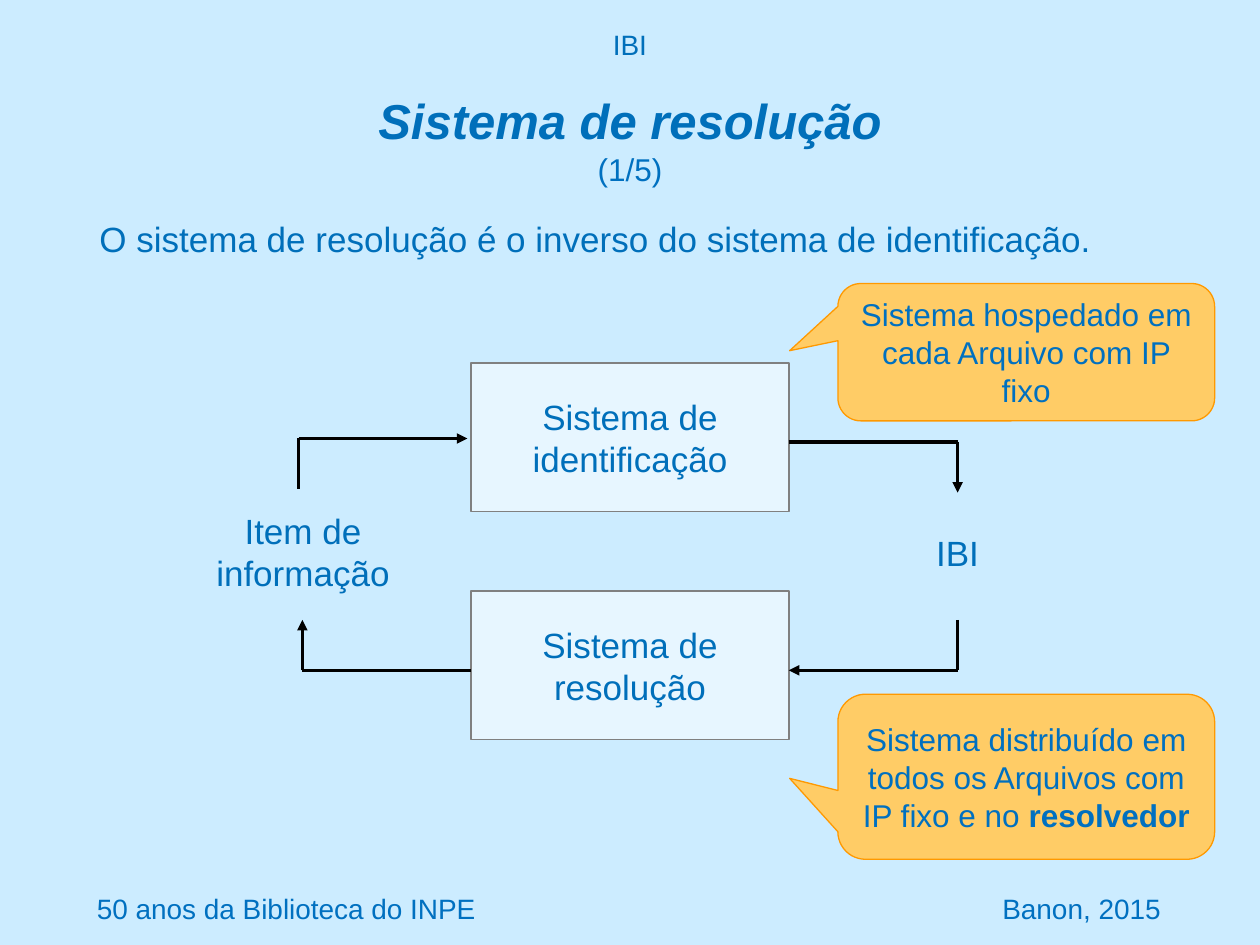
from lxml import etree
from pptx import Presentation
from pptx.dml.color import RGBColor
from pptx.enum.shapes import MSO_CONNECTOR as Connector, MSO_SHAPE as Shape
from pptx.enum.text import MSO_ANCHOR as Anchor, PP_ALIGN as Align
from pptx.oxml.ns import qn
from pptx.util import Inches, Pt

BLUE, DEEP_BLUE = "006FBA", "0070C0"
TITLE = [("Sistema de resolução", dict(size=28, bold=True, italic=True)),
         ("\n", {}),
         ("(1/5)", dict(size=18, color=DEEP_BLUE))]
STATEMENT = "O sistema de resolução é o inverso do sistema de identificação."
HEADER = "IBI"
FOOTER = [("50 anos da Biblioteca do INPE", Align.LEFT),
          ("Banon, 2015", Align.RIGHT)]
SYSTEMS = [("Sistema de identificação", 2.88), ("Sistema de resolução", 4.69)]
ENDPOINTS = [("Item de informação", (1.54, 3.91, 1.73, 0.94)),
             ("IBI", (7.13, 3.99, 0.94, 0.79))]
CALLOUTS = [
    ([("Sistema hospedado em cada Arquivo com IP fixo", {})], 2.25, 1.09, -0.011),
    ([("Sistema distribuído em todos os Arquivos com IP fixo e no ", {}),
      ("resolvedor", dict(bold=True))], 5.51, 1.31, 0.01),
]
FLOWS = [
    [(6.26, 3.51), (7.6, 3.51), (7.6, 3.91)],
    [(7.6, 4.92), (7.6, 5.32), (6.26, 5.32)],
    [(3.74, 5.32), (2.4, 5.32), (2.4, 4.92)],
    [(2.37, 3.88), (2.37, 3.48), (3.71, 3.48)],
]


def rgb(value):
    return RGBColor.from_string(value)


def write(shape, text, size=20, color=BLUE, align=Align.CENTER,
          anchor=Anchor.MIDDLE, inset_y=0.05):
    frame = shape.text_frame
    frame.word_wrap = True
    frame.vertical_anchor = anchor
    frame.margin_top = frame.margin_bottom = Inches(inset_y)
    paragraph = frame.paragraphs[0]
    paragraph.alignment = align
    for words, style in [(text, {})] if isinstance(text, str) else text:
        if words == "\n":
            paragraph.add_line_break()
            continue
        run = paragraph.add_run()
        run.text = words
        run.font.name = "Arial"
        run.font.size = Pt(style.get("size", size))
        run.font.bold = style.get("bold", False)
        run.font.italic = style.get("italic", False)
        run.font.color.rgb = rgb(style.get("color", color))


def add_text(slide, box, text, **style):
    write(slide.shapes.add_textbox(*map(Inches, box)), text, **style)


def add_block(slide, kind, box, text, fill=None, line=None, width=1, **style):
    block = slide.shapes.add_shape(kind, *map(Inches, box))
    block.shadow.inherit = False
    if fill:
        block.fill.solid()
        block.fill.fore_color.rgb = rgb(fill)
        block.line.color.rgb = rgb(line)
        block.line.width = Pt(width)
    else:
        block.fill.background()
        block.line.fill.background()
    write(block, text, **style)
    return block


def add_segment(slide, start, end, arrow):
    segment = slide.shapes.add_connector(
        Connector.STRAIGHT, *map(Inches, start + end))
    segment.line.color.rgb = rgb("000000")
    segment.line.width = Pt(2)
    if arrow:
        etree.SubElement(segment.line._get_or_add_ln(), qn("a:tailEnd"),
                         type="triangle")
    etree.SubElement(segment._element.spPr, qn("a:effectLst"))


def main():
    deck = Presentation()
    deck.slide_width, deck.slide_height = Inches(10), Inches(7.5)
    slide = deck.slides.add_slide(deck.slide_layouts[6])
    slide.background.fill.solid()
    slide.background.fill.fore_color.rgb = rgb("CCECFF")

    add_text(slide, (0.75, 0.52, 8.5, 1.17), TITLE)
    add_text(slide, (0.69, 1.73, 8.62, 0.4), STATEMENT,
             align=Align.LEFT, anchor=Anchor.TOP, inset_y=0)
    add_text(slide, (0, 0.17, 10, 0.37), HEADER, size=16, anchor=Anchor.TOP)
    for column, (credit, align) in enumerate(FOOTER):
        add_text(slide, (0.67 + 4.32 * column, 7, 4.32, 0.42), credit,
                 size=16, color=DEEP_BLUE, align=align)

    for system, top in SYSTEMS:
        add_block(slide, Shape.RECTANGLE, (3.74, top, 2.52, 1.18), system,
                  fill="E7F6FF", line="808080")
    for endpoint, box in ENDPOINTS:
        add_block(slide, Shape.FLOWCHART_PROCESS, box, endpoint)
    for remark, top, height, tip in CALLOUTS:
        callout = add_block(slide, Shape.ROUNDED_RECTANGULAR_CALLOUT,
                            (6.65, top, 2.99, height), remark,
                            fill="FFCC66", line="FF9900", width=0.75,
                            size=18, color=DEEP_BLUE)
        for index, value in enumerate((-0.628, tip, 0.167)):
            callout.adjustments[index] = value
    for start, corner, end in FLOWS:
        add_segment(slide, start, corner, arrow=False)
        add_segment(slide, corner, end, arrow=True)

    deck.save("out.pptx")


if __name__ == "__main__":
    main()
